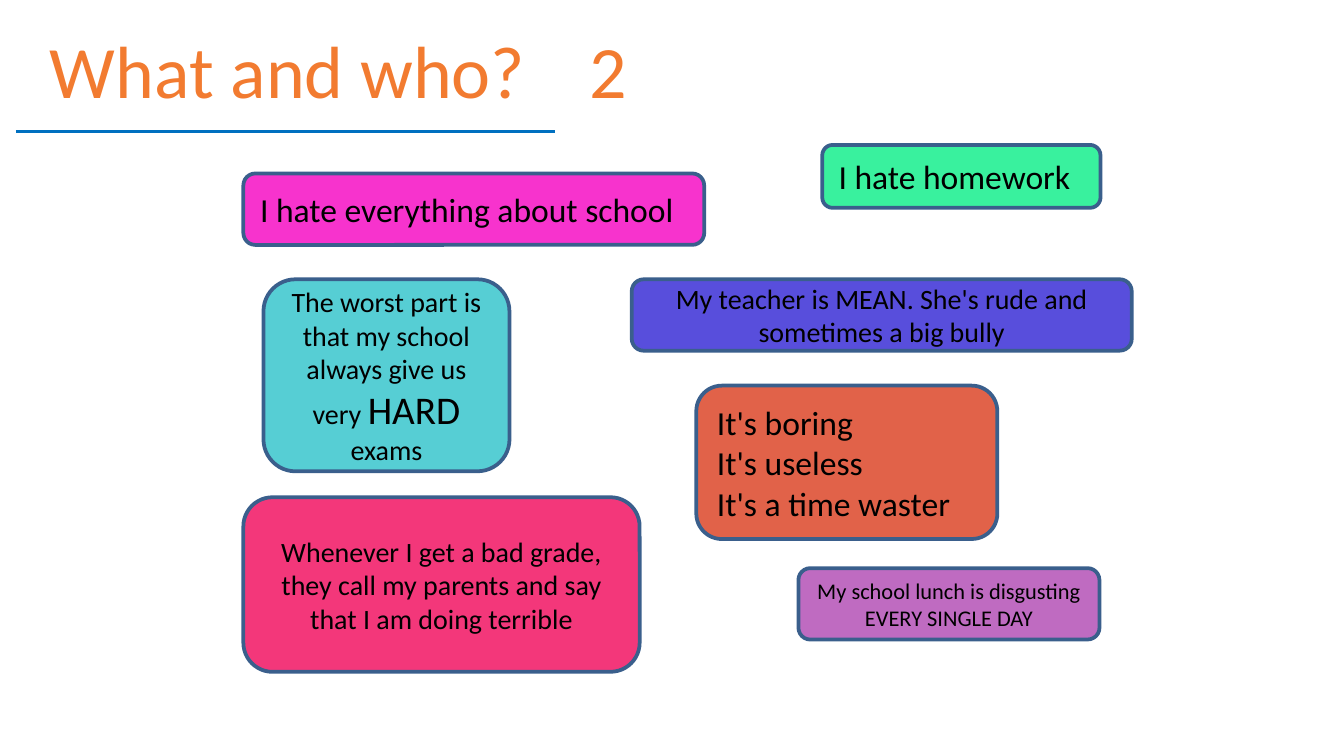
from lxml import etree
from pptx import Presentation
from pptx import util as u
from pptx.dml.color import RGBColor
from pptx.enum import shapes, text
from pptx.oxml import ns

FONT = "Calibri"
TITLE = "What and who?\t2"
TITLE_COLOR, RULE_COLOR, BORDER, INK = "F27B30", "0070C0", "3A5F8C", "000000"
LEFT, CENTER = text.PP_ALIGN.LEFT, text.PP_ALIGN.CENTER

OPINIONS = [
    ((4.6, 3.28, 8.71, 1.35), "F733CD", LEFT,
     [[("I hate everything about school", 18)]]),
    ((11.94, 5.28, 9.45, 1.35), "584EDC", CENTER,
     [[("My teacher is MEAN. She's rude and sometimes a big bully", 15)]]),
    ((4.6, 9.4, 7.49, 3.3), "F3377A", CENTER,
     [[("Whenever I get a bad grade, they call my parents and say "
        "that I am doing terrible", 15)]]),
    ((15.54, 2.74, 5.26, 1.19), "39F19E", LEFT,
     [[("I hate homework", 18)]]),
    ((13.16, 7.29, 5.69, 2.9), "E16249", LEFT,
     [[("It's boring", 18)], [("It's useless", 18)],
      [("It's a time waster", 18)]]),
    ((15.09, 10.74, 5.69, 1.35), "BF6BC1", CENTER,
     [[("My school lunch is disgusting EVERY SINGLE DAY", 12)]]),
    ((4.98, 5.28, 4.65, 3.63), "56CED4", CENTER,
     [[("The worst part is that my school always give us very ", 15),
       ("HARD ", 21), ("exams", 15)]]),
]


def paint(color, value):
    color.rgb = RGBColor.from_string(value)


def style(font, size, color):
    font.name = FONT
    font.size = u.Pt(size)
    paint(font.color, color)


def add_title(s):
    sp = s.shapes.title
    sp.left, sp.top, sp.width, sp.height = map(u.Cm, (0.69, 0.48, 16.54, 1.65))
    tf = sp.text_frame
    tf.text = TITLE
    tf.auto_size = text.MSO_AUTO_SIZE.NONE
    tf.vertical_anchor = text.MSO_ANCHOR.MIDDLE
    p = tf.paragraphs[0]
    p.alignment = LEFT
    tabs = etree.SubElement(p._p.get_or_add_pPr(), ns.qn("a:tabLst"))
    etree.SubElement(tabs, ns.qn("a:tab"), pos=str(u.Cm(10.2)), algn="l")
    style(p.runs[0].font, 39.6, TITLE_COLOR)


def add_rule(s):
    ends = map(u.Cm, (0.3, 2.49, 10.49, 2.49))
    line = s.shapes.add_connector(shapes.MSO_CONNECTOR.STRAIGHT, *ends)
    paint(line.line.color, RULE_COLOR)
    line.line.width = u.Pt(1.5)
    etree.SubElement(line._element.spPr, ns.qn("a:effectLst"))


def add_opinion(s, box, fill, align, paragraphs):
    sp = s.shapes.add_shape(shapes.MSO_SHAPE.ROUNDED_RECTANGLE, *map(u.Cm, box))
    sp.shadow.inherit = False
    sp.fill.solid()
    paint(sp.fill.fore_color, fill)
    paint(sp.line.color, BORDER)
    sp.line.width = u.Pt(2)
    tf = sp.text_frame
    tf.word_wrap = True
    tf.vertical_anchor = text.MSO_ANCHOR.MIDDLE
    for i, runs in enumerate(paragraphs):
        p = tf.add_paragraph() if i else tf.paragraphs[0]
        p.alignment = align
        for words, size in runs:
            r = p.add_run()
            r.text = words
            style(r.font, size, INK)


def main():
    prs = Presentation()
    prs.slide_width, prs.slide_height = u.Cm(25.4), u.Cm(14.29)
    s = prs.slides.add_slide(prs.slide_layouts[5])
    add_rule(s)
    add_title(s)
    for opinion in OPINIONS:
        add_opinion(s, *opinion)
    prs.save("out.pptx")


if __name__ == "__main__":
    main()
